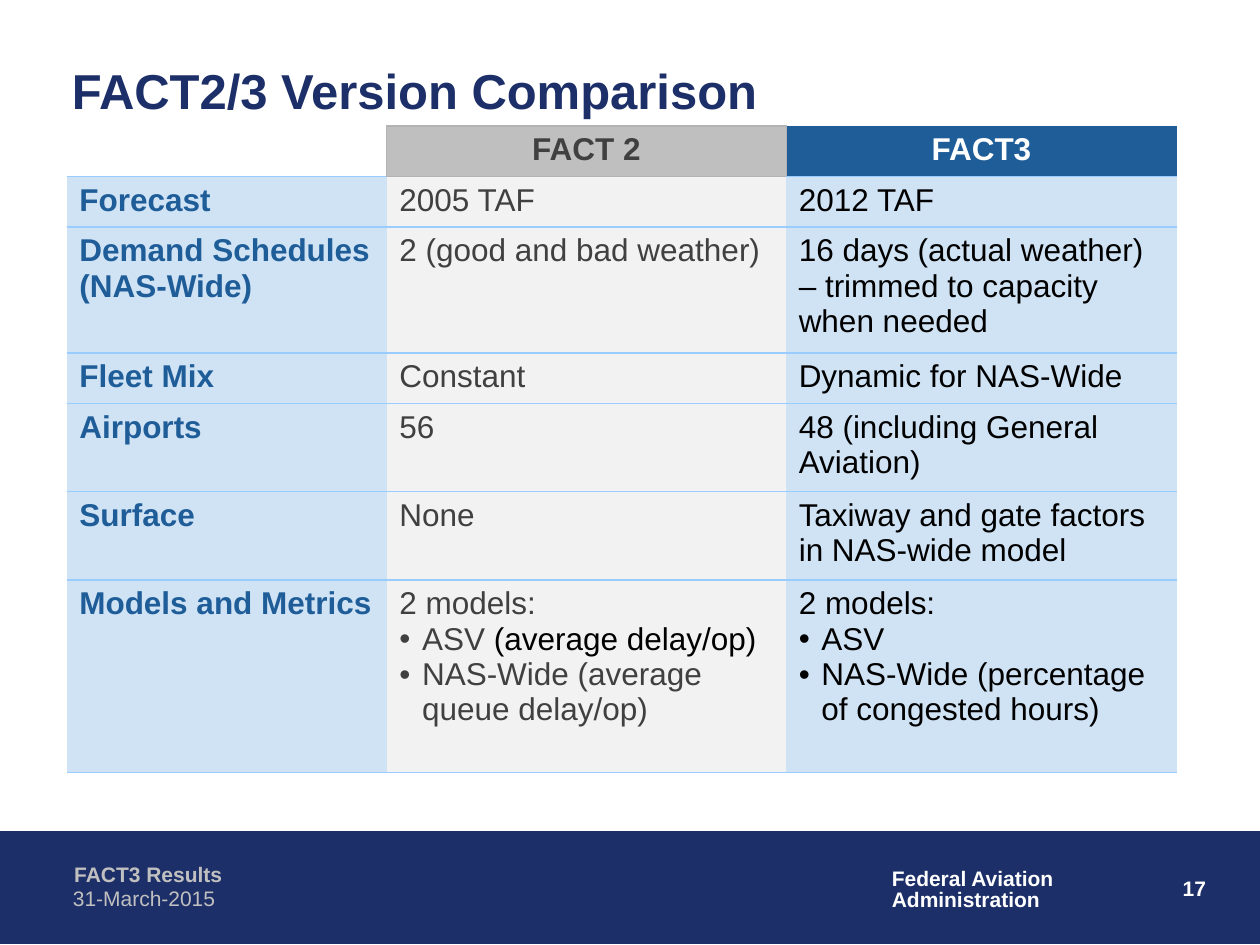
"""Build the FACT2/3 version comparison slide."""
from dataclasses import dataclass
from typing import Optional

from lxml import etree
from pptx import Presentation
from pptx.dml.color import RGBColor
from pptx.enum.shapes import MSO_SHAPE
from pptx.enum.text import MSO_ANCHOR, MSO_AUTO_SIZE, PP_ALIGN
from pptx.oxml.ns import qn
from pptx.util import Inches, Pt

RECTANGLE = MSO_SHAPE.RECTANGLE
MIDDLE = MSO_ANCHOR.MIDDLE
NO_AUTOFIT = MSO_AUTO_SIZE.NONE
LEFT, CENTER, RIGHT = PP_ALIGN.LEFT, PP_ALIGN.CENTER, PP_ALIGN.RIGHT
TITLE_ONLY = 5
COLORS = {
    "navy": "1D2F68", "blue": "1F5D99", "pale_blue": "D0E3F5",
    "rule": "99CCFF", "edge": "B3B3B3", "silver": "C0C0C0",
    "gray": "BFBFBF", "pale_gray": "F2F2F2", "dark_gray": "404040",
    "black": "000000", "white": "FFFFFF",
}
COLUMN_WIDTHS = (2.54, 3.17, 3.1)
ROW_HEIGHTS = (0.4, 0.4, 1, 0.4, 0.7, 0.7, 1.53, 0.4)
BULLET_INDENT = 0.18


@dataclass(frozen=True)
class Run:
    text: str
    color: Optional[str] = None


@dataclass(frozen=True)
class Line:
    runs: tuple[Run, ...]
    bullet: bool = False


@dataclass(frozen=True)
class CellStyle:
    fill: Optional[str]
    color: str
    bold: bool = False
    align: PP_ALIGN = LEFT


@dataclass(frozen=True)
class FooterText:
    lines: tuple[str, ...]
    box: tuple[float, float, float, float]
    color: str
    bold: bool = True
    align: PP_ALIGN = LEFT
    spacing: float = 1.0


HEADER_STYLES = (
    CellStyle(None, "black"),
    CellStyle("gray", "dark_gray", True, CENTER),
    CellStyle("blue", "white", True, CENTER),
)
BODY_STYLES = (
    CellStyle("pale_blue", "blue", True),
    CellStyle("pale_gray", "dark_gray"),
    CellStyle("pale_blue", "black"),
)
BLANK_STYLES = (CellStyle("white", "black"),) * 3


def plain(text: str) -> Line:
    """Return an unbulleted line."""
    return Line((Run(text),))


def bullet(*runs: Run) -> Line:
    """Return a bulleted line."""
    return Line(runs, True)


ROWS = (
    ("", "FACT 2", "FACT3"),
    ("Forecast", "2005 TAF", "2012 TAF"),
    ("Demand Schedules (NAS-Wide)", "2 (good and bad weather)",
     "16 days (actual weather) – trimmed to capacity when needed"),
    ("Fleet Mix", "Constant", "Dynamic for NAS-Wide"),
    ("Airports", "56", "48 (including General Aviation)"),
    ("Surface", "None", "Taxiway and gate factors in NAS-wide model"),
    ("Models and Metrics",
     (plain("2 models:"),
      bullet(Run("ASV "), Run("(average delay/op)", "black")),
      bullet(Run("NAS-Wide (average queue delay/op)"))),
     (plain("2 models:"), bullet(Run("ASV")),
      bullet(Run("NAS-Wide (percentage of congested hours)")))),
    ("", "", ""),
)
FOOTER_TEXTS = (
    FooterText(("17",), (7.59, 6.9, 2.08, 0.5), "white", align=RIGHT),
    FooterText(("Federal Aviation", "Administration"),
               (6.98, 6.85, 1.5, 0.44), "white", spacing=0.85),
    FooterText(("FACT3 Results",), (0.49, 6.79, 5.23, 0.3), "silver"),
    FooterText(("31-March-2015",), (0.48, 6.98, 4.09, 0.3), "silver", False),
)


def rgb(name: str) -> RGBColor:
    """Return a named colour."""
    return RGBColor.from_string(COLORS[name])


def format_font(font, size: float, color: str, bold: bool) -> None:
    """Apply the slide typeface and the given format."""
    values = {"name": "Arial", "size": Pt(size), "bold": bold}
    for attribute, value in values.items():
        setattr(font, attribute, value)
    font.color.rgb = rgb(color)


def add_bullet(paragraph) -> None:
    """Give a paragraph a hanging bullet."""
    properties = paragraph._p.get_or_add_pPr()
    properties.set("marL", str(Inches(BULLET_INDENT)))
    properties.set("indent", str(-Inches(BULLET_INDENT)))
    etree.SubElement(properties, qn("a:buFont"), typeface="Arial")
    etree.SubElement(properties, qn("a:buChar"), char="•")


def set_borders(cell, row: int, column: int) -> None:
    """Draw grey edges round the FACT 2 header and blue rules between rows."""
    last = len(ROWS) - 1
    sides = {
        "L": "edge" if row == 0 and column > 0 else None,
        "R": "edge" if row == 0 and column < 2 else None,
        "T": "rule" if row > 0 else None,
        "B": "rule" if row < last else None,
    }
    if column == 1 and row == 0:
        sides.update(T="edge", B="edge")
    if column == 1 and row == 1:
        sides["T"] = "edge"
    properties = cell._tc.get_or_add_tcPr()
    for side, color in sides.items():
        width = Pt(1) if color == "rule" else Pt(0.75)
        line = etree.SubElement(properties, qn(f"a:ln{side}"),
                                w=str(width if color else 0))
        if color:
            fill = etree.SubElement(line, qn("a:solidFill"))
            etree.SubElement(fill, qn("a:srgbClr"), val=COLORS[color])
        else:
            etree.SubElement(line, qn("a:noFill"))


def fill_cell(cell, content: str | tuple[Line, ...], style: CellStyle) -> None:
    """Write and colour one table cell."""
    if style.fill:
        cell.fill.solid()
        cell.fill.fore_color.rgb = rgb(style.fill)
    else:
        cell.fill.background()
    lines = (plain(content),) if isinstance(content, str) else content
    frame = cell.text_frame
    for index, line in enumerate(lines):
        paragraph = frame.add_paragraph() if index else frame.paragraphs[0]
        paragraph.alignment = style.align
        if line.bullet:
            add_bullet(paragraph)
        for part in line.runs:
            if part.text:
                run = paragraph.add_run()
                run.text = part.text
                format_font(run.font, 18, part.color or style.color, style.bold)


def add_comparison(slide) -> None:
    """Add the comparison table."""
    table = slide.shapes.add_table(
        len(ROWS), len(COLUMN_WIDTHS), Inches(0.53), Inches(1),
        Inches(sum(COLUMN_WIDTHS)), Inches(sum(ROW_HEIGHTS))).table
    table.first_row = table.horz_banding = False
    for column, width in zip(table.columns, COLUMN_WIDTHS):
        column.width = Inches(width)
    for index, (row, height) in enumerate(zip(table.rows, ROW_HEIGHTS)):
        row.height = Inches(height)
        styles = {0: HEADER_STYLES, len(ROWS) - 1: BLANK_STYLES}.get(index, BODY_STYLES)
        for column, (content, style) in enumerate(zip(ROWS[index], styles)):
            cell = table.cell(index, column)
            set_borders(cell, index, column)
            fill_cell(cell, content, style)


def add_footer(slide) -> None:
    """Add the footer band and its texts."""
    band = slide.shapes.add_shape(
        RECTANGLE, Inches(0), Inches(6.6), Inches(10), Inches(0.89))
    band.shadow.inherit = False
    band.fill.solid()
    band.fill.fore_color.rgb = band.line.color.rgb = rgb("navy")
    band.line.width = Pt(0.75)
    for item in FOOTER_TEXTS:
        frame = slide.shapes.add_textbox(*map(Inches, item.box)).text_frame
        frame.word_wrap = True
        for index, text in enumerate(item.lines):
            paragraph = frame.add_paragraph() if index else frame.paragraphs[0]
            paragraph.text = text
            paragraph.alignment = item.align
            paragraph.line_spacing = item.spacing
            format_font(paragraph.runs[0].font, 12, item.color, item.bold)


def add_title(slide) -> None:
    """Place and format the title."""
    title = slide.shapes.title
    box = {"left": 0.47, "top": 0.38, "width": 9.27, "height": 0.67}
    for attribute, value in box.items():
        setattr(title, attribute, Inches(value))
    frame = title.text_frame
    frame.text = "FACT2/3 Version Comparison"
    frame.auto_size = NO_AUTOFIT
    frame.vertical_anchor = MIDDLE
    frame.paragraphs[0].alignment = LEFT
    format_font(frame.paragraphs[0].runs[0].font, 28, "navy", True)


def main() -> None:
    """Build and save the presentation."""
    presentation = Presentation()
    presentation.slide_width, presentation.slide_height = Inches(10), Inches(7.5)
    slide = presentation.slides.add_slide(presentation.slide_layouts[TITLE_ONLY])
    add_footer(slide)
    add_title(slide)
    add_comparison(slide)
    presentation.save("out.pptx")


if __name__ == "__main__":
    main()
